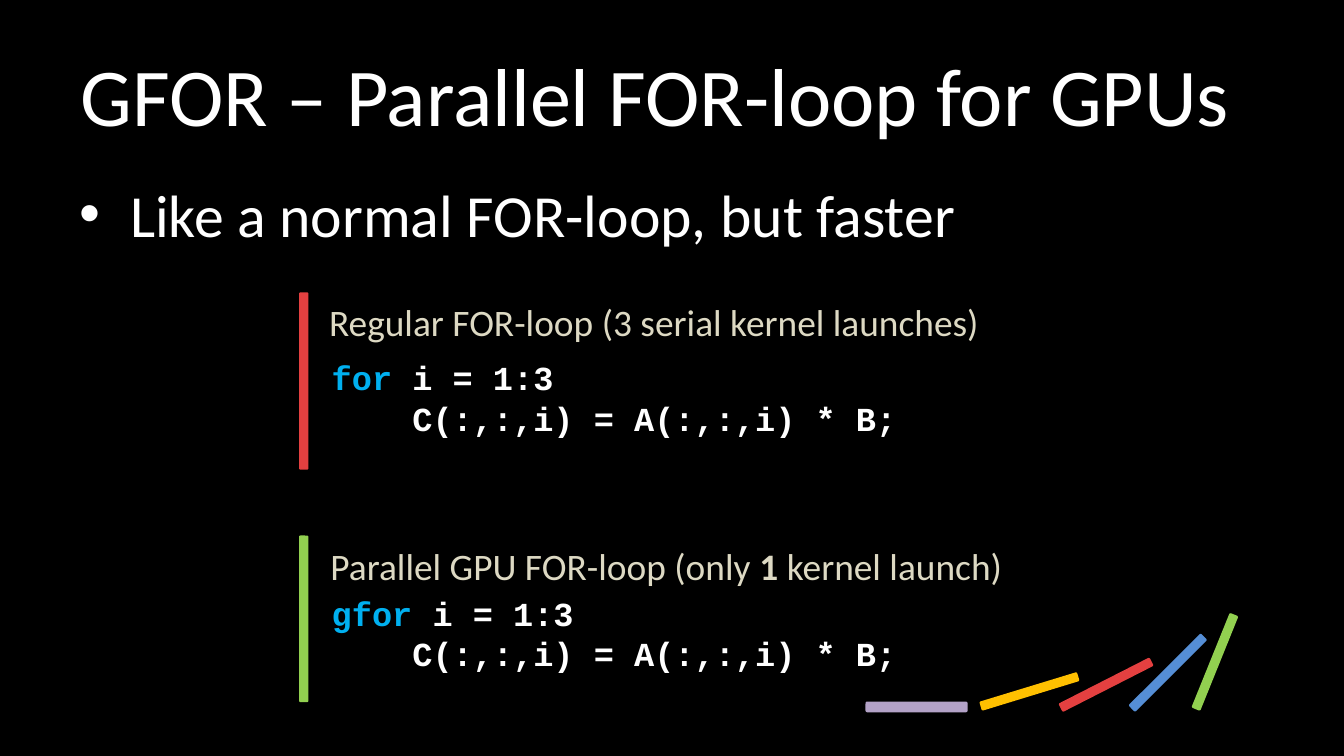
from lxml import etree
from pptx import Presentation
from pptx.dml.color import RGBColor
from pptx.enum.shapes import MSO_SHAPE
from pptx.enum.text import MSO_ANCHOR
from pptx.oxml.ns import qn
from pptx.util import Inches, Pt

ROUNDED = MSO_SHAPE.ROUNDED_RECTANGLE
TOP, MIDDLE = MSO_ANCHOR.TOP, MSO_ANCHOR.MIDDLE

BLACK = RGBColor(0x00, 0x00, 0x00)
WHITE = RGBColor(0xFF, 0xFF, 0xFF)
SAND = RGBColor(0xDD, 0xD9, 0xC3)
CYAN = RGBColor(0x00, 0xB0, 0xF0)
RED = RGBColor(0xE4, 0x40, 0x40)
GREEN = RGBColor(0x92, 0xD0, 0x50)
YELLOW = RGBColor(0xFF, 0xC0, 0x00)
BLUE = RGBColor(0x55, 0x8E, 0xD5)
PURPLE = RGBColor(0xB3, 0xA2, 0xC7)

TITLE = {"name": "Calibri", "size": Pt(44)}
BODY = {"name": "Calibri", "size": Pt(32)}
CAPTION = {"name": "Calibri", "size": Pt(20)}
CODE = {"name": "Courier New", "size": Pt(18), "bold": True}

# Widescreen 16:9 slide
prs = Presentation()
prs.slide_width = Inches(10)
prs.slide_height = Inches(10) * 9 // 16
slide = prs.slides.add_slide(prs.slide_layouts[6])
slide.background.fill.solid()
slide.background.fill.fore_color.rgb = BLACK


def add_text(box, lines, style, anchor=TOP, wrap=True):
    """Each line is a list of (text, colour, extra format) runs."""
    frame = slide.shapes.add_textbox(*map(Inches, box)).text_frame
    frame.word_wrap = wrap
    frame.vertical_anchor = anchor
    for number, runs in enumerate(lines):
        paragraph = frame.add_paragraph() if number else frame.paragraphs[0]
        for text, colour, extra in runs:
            run = paragraph.add_run()
            run.text = text
            run.font.color.rgb = colour
            for key, value in {**style, **extra}.items():
                setattr(run.font, key, value)
    return frame


def add_bar(box, colour, rotation=0):
    bar = slide.shapes.add_shape(ROUNDED, *map(Inches, box))
    bar.rotation = rotation
    bar.shadow.inherit = False
    bar.fill.solid()
    bar.fill.fore_color.rgb = colour
    bar.line.fill.background()


# Title
add_text((0.5, 0.23, 9, 0.94),
         [[("GFOR – Parallel FOR-loop for GPUs", WHITE, {})]], TITLE, MIDDLE)

# Bullet
body = add_text((0.49, 1.27, 9, 3.71),
                [[("Like a normal FOR-loop, but faster", WHITE, {})]], BODY)
bullet = body.paragraphs[0]._p.get_or_add_pPr()
bullet.set("marL", str(Inches(0.38)))
bullet.set("indent", str(Inches(-0.38)))
etree.SubElement(bullet, qn("a:buFont")).set("typeface", "Arial")
etree.SubElement(bullet, qn("a:buChar")).set("char", "•")

# Loop examples: keyword, code top, caption box, caption runs, bar box, colour
examples = [
    ("for ", 2.61, (2.35, 2.18, 5.16, 0.44),
     [("Regular FOR-loop (3 serial kernel launches)", SAND, {})],
     (1.6, 2.8, 1.32, 0.07), RED),
    ("gfor ", 4.36, (2.36, 3.99, 5.25, 0.44),
     [("Parallel GPU FOR-loop (only ", SAND, {}), ("1", SAND, {"bold": True}),
      (" kernel launch)", SAND, {})],
     (1.64, 4.57, 1.24, 0.07), GREEN),
]
for keyword, code_top, caption_box, caption, bar_box, colour in examples:
    code = [[(" ", WHITE, {}), (keyword, CYAN, {}), ("i = 1:3", WHITE, {})],
            [("     C(:,:,i) = A(:,:,i) * B;", WHITE, {})]]
    add_text((2.22, code_top, 5, 0.71), code, CODE)
    add_bar(bar_box, colour, 90)
    add_text(caption_box, [caption], CAPTION, wrap=False)

# Fan of coloured sticks
sticks = [
    (8.66, 4.89, 0.07, GREEN, 292),
    (7.85, 5.06, 0.07, RED, 333),
    (7.28, 5.11, 0.07, YELLOW, 343),
    (8.31, 4.97, 0.07, BLUE, 315),
    (6.44, 5.22, 0.08, PURPLE, 0),
]
for left, top, thickness, colour, rotation in sticks:
    add_bar((left, top, 0.76, thickness), colour, rotation)

prs.save("out.pptx")
